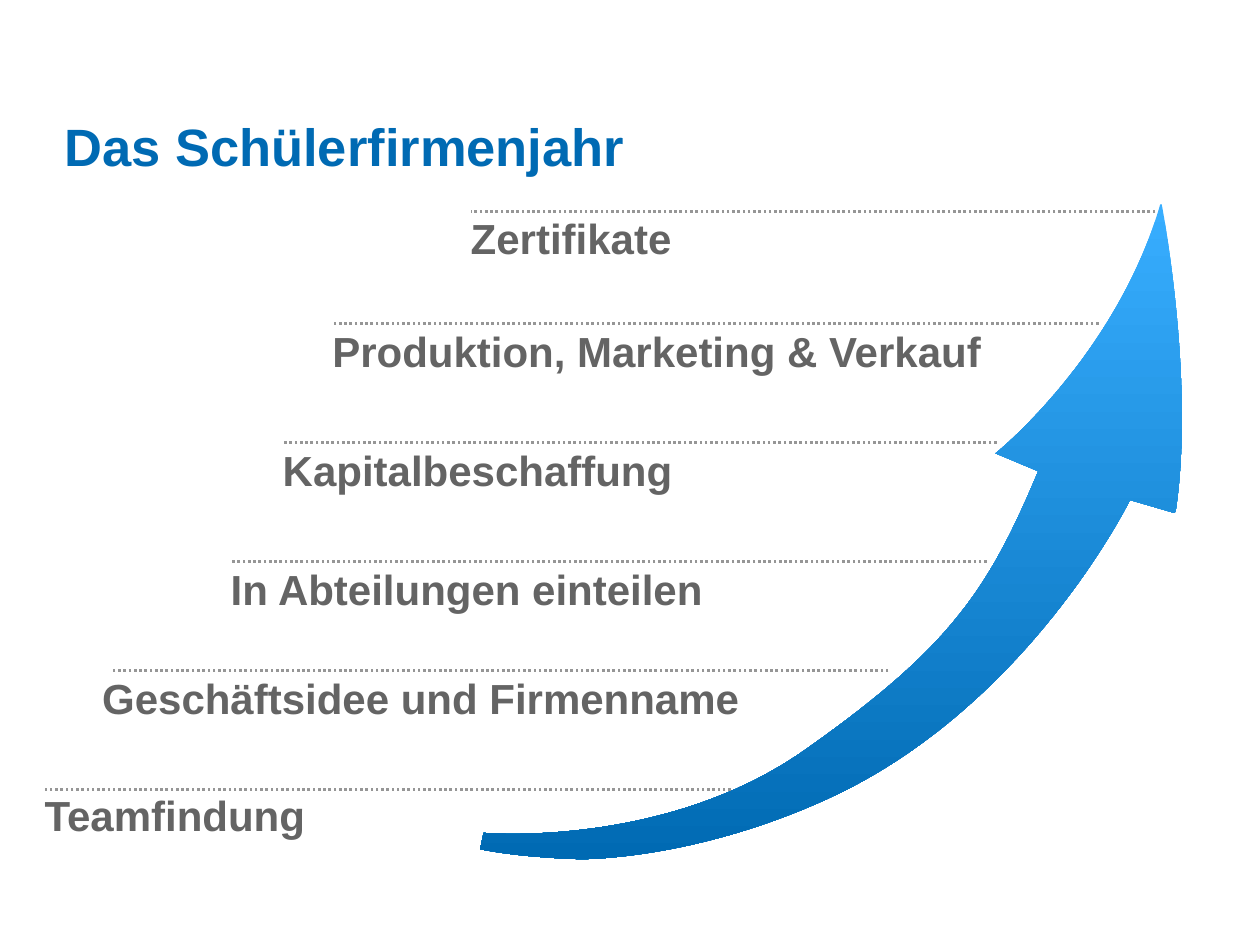
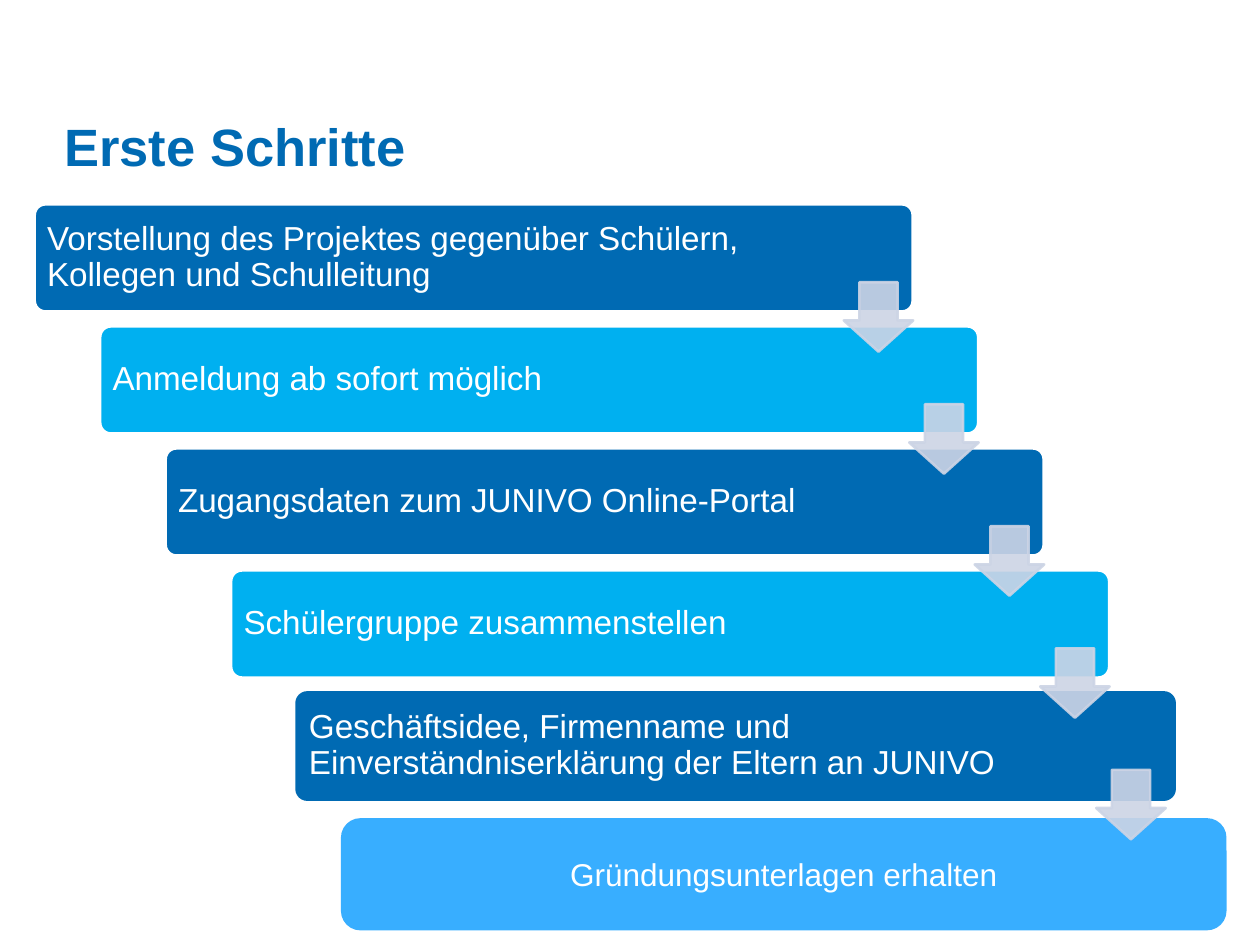
"""Build two slides about the student company year and its first steps."""
import pptx
import pptx.dml.color
import pptx.enum.dml
import pptx.enum.shapes
import pptx.enum.text
import pptx.oxml.ns
import pptx.util
from lxml import etree

Cm = pptx.util.Cm
Pt = pptx.util.Pt
RGBColor = pptx.dml.color.RGBColor
MSO_SHAPE = pptx.enum.shapes.MSO_SHAPE
ANCHOR = pptx.enum.text.MSO_ANCHOR
ALIGN = pptx.enum.text.PP_ALIGN
qn = pptx.oxml.ns.qn

FONT = "Arial"
BLUE = RGBColor(0x00, 0x6A, 0xB3)
CYAN = RGBColor(0x00, 0xB0, 0xF0)
LIGHT_BLUE = RGBColor(0x38, 0xAE, 0xFF)
PALE = RGBColor(0xCC, 0xD4, 0xE5)
DARK_GREY = RGBColor(0x64, 0x64, 0x64)
GREY = RGBColor(0x96, 0x96, 0x96)
WHITE = RGBColor(0xFF, 0xFF, 0xFF)

LINE_WIDTH = Pt(1.5)
STEP_X, STEP_Y = 1.32, 2.46

# Label, text left, text top, text width, line left, line right, line height
STAGES = [
    ("Teamfindung", 0.9, 15.92, 10.85, 0.89, 14.73, 15.92),
    ("Geschäftsidee und Firmenname", 2.06, 13.56, 13.41, 2.25, 17.91, 13.52),
    ("In Abteilungen einteilen", 4.65, 11.36, 13.06, 4.66, 19.89, 11.32),
    ("Kapitalbeschaffung", 5.7, 8.97, 12.34, 5.7, 20.09, 8.92),
    ("Produktion, Marketing & Verkauf", 6.7, 6.56, 13.23, 6.7, 22.15, 6.52),
    ("Zertifikate", 9.49, 4.29, 11.84, 9.5, 23.29, 4.26),
]

# One point is a straight segment, three points are a Bézier segment
ARROW_START = (11.71, 17.32)
ARROW_SEGMENTS = [
    [ARROW_START, (14.05, 17.35), (16.84, 16.03)],
    [(20.78, 14.15), (22.78, 10.08), (22.78, 10.08)],
    [(23.67, 10.34)],
    [(23.7, 10.31)],
    [(24.05, 7.98), (23.57, 4.93), (23.42, 4.12)],
    [(23.39, 4.12)],
    [(22.5, 7.19), (20.07, 9.14), (20.07, 9.14)],
    [(20.93, 9.5)],
    [(19.94, 11.86), (19.18, 13.03), (16.31, 15.06)],
    [(13.46, 17.12), (9.75, 16.79), (9.75, 16.79)],
    [(9.68, 17.12)],
    [(10.57, 17.3), ARROW_START, ARROW_START],
]

FIRST_STEPS = [
    "Vorstellung des Projektes gegenüber Schülern, Kollegen und Schulleitung",
    "Anmeldung ab sofort möglich",
    "Zugangsdaten zum JUNIVO Online-Portal",
    "Schülergruppe zusammenstellen",
    "Geschäftsidee, Firmenname und Einverständniserklärung der Eltern an JUNIVO",
]


def add_run(p, text, size, color, bold=False):
    """Append a formatted run to a paragraph."""
    r = p.add_run()
    r.text = text
    r.font.name = FONT
    r.font.size = Pt(size)
    r.font.bold = bold
    r.font.color.rgb = color


def add_text(s, text, left, top, width, height, size, color, bold=True, inset=0):
    """Add a wrapping text box and return its text frame."""
    sp = s.shapes.add_textbox(Cm(left), Cm(top), Cm(width), Cm(height))
    tf = sp.text_frame
    tf.word_wrap = True
    tf.margin_left = tf.margin_top = tf.margin_right = tf.margin_bottom = Cm(inset)
    add_run(tf.paragraphs[0], text, size, color, bold)
    return tf


def add_titled_slide(prs, title):
    """Add a blank slide with the shared title style."""
    s = prs.slides.add_slide(prs.slide_layouts[6])
    add_text(s, title, 1.3, 2.3, 23.01, 1.27, 30, BLUE)
    return s


def add_dotted_line(s, left, right, y):
    """Add a horizontal dotted line."""
    cn = s.shapes.add_connector(
        pptx.enum.shapes.MSO_CONNECTOR.STRAIGHT, Cm(right), Cm(y), Cm(left), Cm(y))
    cn.line.color.rgb = GREY
    cn.line.width = LINE_WIDTH
    cn.line.dash_style = pptx.enum.dml.MSO_LINE.ROUND_DOT
    etree.SubElement(cn._element.spPr, qn("a:effectLst"))


def curve_segments(sp, segments):
    """Turn each run of three line segments into one Bézier segment."""
    lines = iter(list(sp._element.spPr.iter(qn("a:lnTo"))))
    for segment in segments:
        parts = [next(lines) for _ in segment]
        if len(parts) == 3:
            curve = etree.Element(qn("a:cubicBezTo"))
            parts[0].addprevious(curve)
            for part in parts:
                curve.append(part[0])
                part.getparent().remove(part)


def add_growth_arrow(s):
    """Add the curved arrow with a vertical gradient."""
    fb = s.shapes.build_freeform(*map(Cm, ARROW_START))
    fb.add_line_segments(
        [(Cm(x), Cm(y)) for segment in ARROW_SEGMENTS for x, y in segment], close=True)
    sp = fb.convert_to_shape()
    curve_segments(sp, ARROW_SEGMENTS)
    sp.shadow.inherit = False
    sp.line.fill.background()
    sp.fill.gradient()
    sp.fill.gradient_angle = 270
    for stop, color, position in zip(sp.fill.gradient_stops, (LIGHT_BLUE, BLUE), (0, 1)):
        stop.color.rgb = color
        stop.position = position


def add_filled_shape(s, kind, left, top, width, height, fill, line):
    """Add a preset shape with a plain fill and outline."""
    sp = s.shapes.add_shape(kind, Cm(left), Cm(top), Cm(width), Cm(height))
    sp.shadow.inherit = False
    sp.fill.solid()
    sp.fill.fore_color.rgb = fill
    sp.line.color.rgb = line
    sp.line.width = LINE_WIDTH
    return sp


def add_step_box(s, i, text):
    """Add one box of the staircase with its text."""
    left, top = 0.7 + STEP_X * i, 4.12 + STEP_Y * i
    fill = CYAN if i % 2 else BLUE
    line = BLUE if i == len(FIRST_STEPS) - 1 else WHITE
    sp = add_filled_shape(s, MSO_SHAPE.ROUNDED_RECTANGLE, left, top, 17.7, 2.16, fill, line)
    sp.adjustments[0] = 0.1
    tf = add_text(s, text, left + 0.06, top + 0.06, 14.86, 2.03, 19, WHITE,
                  bold=False, inset=0.19)
    tf.vertical_anchor = ANCHOR.MIDDLE
    tf.paragraphs[0].line_spacing = 0.9


def add_final_box(s, text):
    """Add the centred box that closes the staircase."""
    sp = add_filled_shape(s, MSO_SHAPE.ROUNDED_RECTANGLE, 6.9, 16.52, 17.8, 2.21,
                          LIGHT_BLUE, LIGHT_BLUE)
    tf = sp.text_frame
    tf.word_wrap = True
    tf.vertical_anchor = ANCHOR.MIDDLE
    p = tf.paragraphs[0]
    p.alignment = ALIGN.CENTER
    add_run(p, text, 18, WHITE)


def add_down_arrow(s, left, top):
    """Add a slightly transparent arrow between two boxes."""
    sp = add_filled_shape(s, MSO_SHAPE.DOWN_ARROW, left, top, 1.4, 1.4, PALE, PALE)
    sp.adjustments[0] = 0.55
    sp.adjustments[1] = 0.45
    for color in sp._element.spPr.iter(qn("a:srgbClr")):
        etree.SubElement(color, qn("a:alpha"), val="90000")


def build_year_slide(prs):
    """Build the slide with the stages of the year."""
    s = add_titled_slide(prs, "Das Schülerfirmenjahr")
    add_growth_arrow(s)
    for text, left, top, width, line_left, line_right, line_y in STAGES:
        add_dotted_line(s, line_left, line_right, line_y)
        add_text(s, text, left, top, width, 2.01, 24, DARK_GREY)


def build_steps_slide(prs):
    """Build the slide with the staircase of first steps."""
    s = add_titled_slide(prs, "Erste Schritte")
    for i, text in enumerate(FIRST_STEPS):
        add_step_box(s, i, text)
    for i in range(len(FIRST_STEPS) - 1):
        add_down_arrow(s, 17.01 + STEP_X * i, 5.69 + STEP_Y * i)
    add_final_box(s, "Gründungsunterlagen erhalten")
    add_down_arrow(s, 22.1, 15.52)


def main():
    """Create and save the presentation."""
    prs = pptx.Presentation()
    prs.slide_width, prs.slide_height = Cm(25.4), Cm(19.05)
    build_year_slide(prs)
    build_steps_slide(prs)
    prs.save("out.pptx")


if __name__ == "__main__":
    main()
